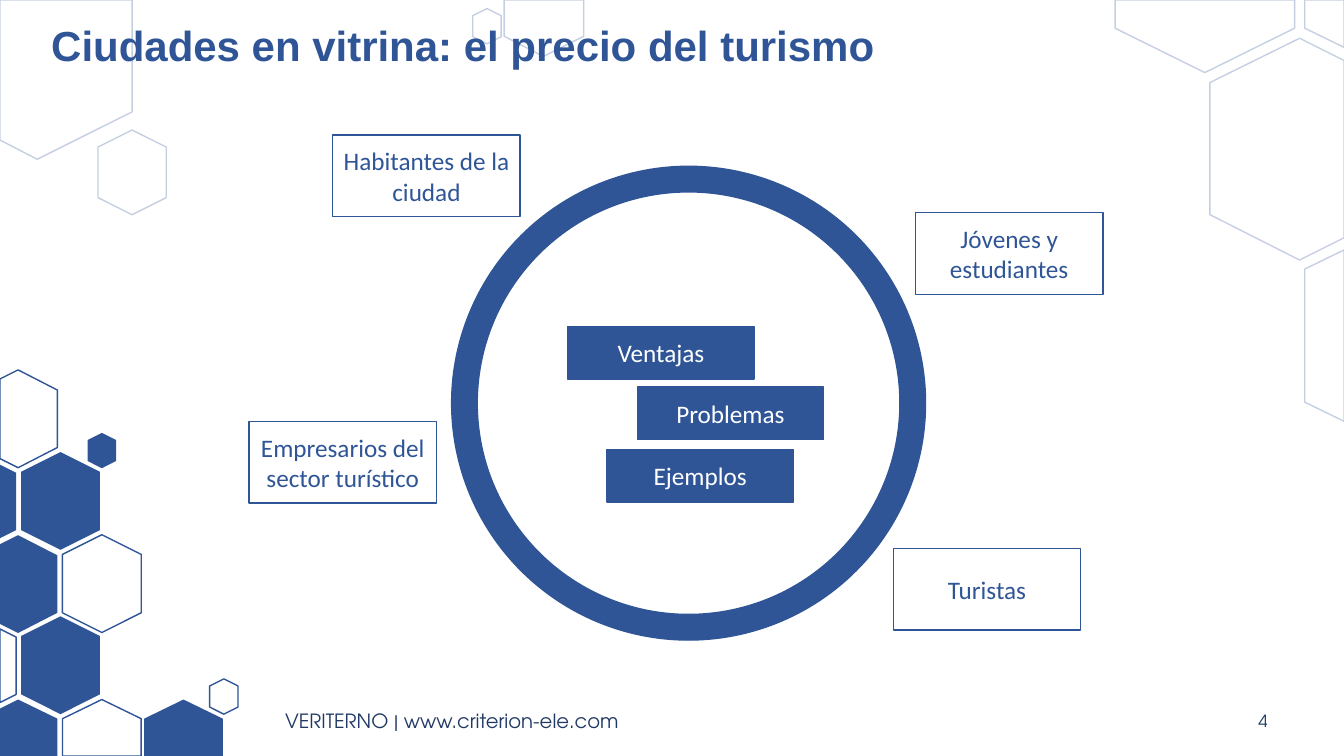
from lxml import etree
from pptx import Presentation
from pptx.dml.color import RGBColor
from pptx.enum.shapes import MSO_SHAPE as Kind
from pptx.enum.text import MSO_ANCHOR as Anchor, PP_ALIGN as Align
from pptx.oxml.ns import qn
from pptx.util import Inches, Pt

HEX = {"blue": "2F5597", "navy": "203864", "white": "FFFFFF"}
WIDE, HIGH = 13.33, 7.5
RATIO = 0.806  # hexagon width over height

# Whole cells: centre x, centre y, height, look
CELLS = [
    (4.83, 0.26, 0.35, "pale"),
    (1.31, 1.71, 0.84, "pale"),
    (1.01, 4.47, 0.35, "solid"),
    (0.6, 4.97, 0.97, "solid"),
    (1.01, 5.79, 0.97, "open"),
    (0.6, 6.6, 0.97, "solid"),
    (2.22, 6.91, 0.35, "open"),
]

# Cells cut off by the slide edge: look, corners
CUTS = [
    ("pale", [(5, 0), (5.79, 0), (5.79, 0.36), (5.39, 0.56), (5, 0.36)]),
    ("pale", [(11.06, 0), (12.84, 0), (12.84, 0.28), (11.95, 0.72), (11.06, 0.28)]),
    ("pale", [(12.94, 0), (WIDE, 0), (WIDE, 0.47), (12.94, 0.28)]),
    ("pale", [(12.89, 0.38), (WIDE, 0.6), (WIDE, 2.36), (12.89, 2.58),
              (12, 2.13), (12, 0.82)]),
    ("pale", [(WIDE, 2.48), (WIDE, 4.18), (12.94, 3.99), (12.94, 2.67)]),
    ("pale", [(0, 0), (1.31, 0), (1.31, 1.11), (0.37, 1.58), (0, 1.39)]),
]
for look, top in (("open", 3.67), ("solid", 5.31)):
    CUTS.append((look, [(0.18, top), (0.57, top + 0.2), (0.57, top + 0.77),
                        (0.18, top + 0.97), (0, top + 0.88), (0, top + 0.09)]))
for look, top in (("solid", 4.61), ("open", 6.24)):
    CUTS.append((look, [(0, top), (0.16, top + 0.08), (0.16, top + 0.65),
                        (0, top + 0.73)]))
CUTS.append(("solid", [(0.18, 6.94), (0.57, 7.13), (0.57, HIGH), (0, HIGH), (0, 7.03)]))
for look, mid in (("open", 1.01), ("solid", 1.82)):
    CUTS.append((look, [(mid, 6.94), (mid + 0.39, 7.13), (mid + 0.39, HIGH),
                        (mid - 0.39, HIGH), (mid - 0.39, 7.13)]))

GROUPS = [
    (3.3, 1.34, "Habitantes de la ciudad"),
    (9.08, 2.11, "Jóvenes y estudiantes"),
    (8.86, 5.44, "Turistas"),
    (2.47, 4.18, "Empresarios del sector turístico"),
]
# Offsets from the corner of the ring
TOPICS = [(1.15, 1.59, "Ventajas"), (1.84, 2.19, "Problemas"), (1.54, 2.81, "Ejemplos")]


def rgb(name):
    return RGBColor.from_string(HEX[name])


def paint(shape, look):
    """Apply a look: solid blue, open with blue line, or pale line."""
    shape.shadow.inherit = False
    shape.fill.solid()
    shape.fill.fore_color.rgb = rgb("blue" if look in ("solid", "ring") else "white")
    if look == "solid":
        shape.line.fill.background()
        return
    shape.line.color.rgb = rgb("blue")
    shape.line.width = Pt(1)
    if look == "pale":
        tint = shape.line._ln.find(".//" + qn("a:srgbClr"))
        etree.SubElement(tint, qn("a:alpha")).set("val", "28000")


def write(shape, text, size, font, color, align=Align.LEFT, bold=False):
    frame = shape.text_frame
    frame.word_wrap = True
    frame.vertical_anchor = Anchor.MIDDLE
    para = frame.paragraphs[0]
    para.alignment = align
    run = para.add_run()
    run.text = text
    run.font.size = Pt(size)
    run.font.name = font
    run.font.bold = bold
    run.font.color.rgb = rgb(color)
    return para


def label(slide, box, text, *style, **more):
    area = slide.shapes.add_textbox(*map(Inches, box))
    return write(area, text, *style, **more)


def card(slide, box, text, look, color):
    shape = slide.shapes.add_shape(Kind.RECTANGLE, *map(Inches, box))
    paint(shape, look)
    write(shape, text, 18, "Calibri", color, Align.CENTER)


def comb(slide):
    """Draw the honeycomb around the edges of the slide."""
    for x, y, high, look in CELLS:
        wide = high * RATIO
        cell = slide.shapes.add_shape(
            Kind.HEXAGON, Inches(x - high / 2), Inches(y - wide / 2),
            Inches(high), Inches(wide))
        cell.rotation = 90
        paint(cell, look)
    for look, spots in CUTS:
        first, *rest = [(Inches(x), Inches(y)) for x, y in spots]
        pen = slide.shapes.build_freeform(*first)
        pen.add_line_segments(rest)
        paint(pen.convert_to_shape(), look)


def footer(slide, top, high):
    font = "TeX Gyre Adventor"
    label(slide, (2.73, top, 6.53, high), "VERITERNO | www.criterion-ele.com",
          14, font, "navy")
    label(slide, (11.68, top, 0.99, high), "4", 12, font, "navy", align=Align.RIGHT)


def title(slide, box):
    para = label(slide, box, "Ciudades en vitrina: el precio del turismo",
                 30, "Arial", "blue", bold=True)
    para.line_spacing = 0.9


def debate(slide, left, top, size):
    """Draw the ring, the groups around it and the topics inside."""
    ring = slide.shapes.add_shape(Kind.DONUT, *map(Inches, (left, top, size, size)))
    ring.adjustments[0] = 0.054
    paint(ring, "ring")
    for x, y, text in GROUPS:
        spot = (left + x - 4.48, top + y - 1.65, 1.86, 0.81)
        card(slide, spot, text, "open", "blue")
    for x, y, text in TOPICS:
        card(slide, (left + x, top + y, 1.85, 0.52), text, "ring", "white")


def main():
    deck = Presentation()
    deck.slide_width, deck.slide_height = Inches(WIDE), Inches(HIGH)
    slide = deck.slides.add_slide(deck.slide_layouts[6])
    comb(slide)
    footer(slide, 6.95, 0.4)
    title(slide, (0.41, 0.18, 11.56, 0.6))
    debate(slide, 4.48, 1.65, 4.7)
    deck.save("out.pptx")


if __name__ == "__main__":
    main()
